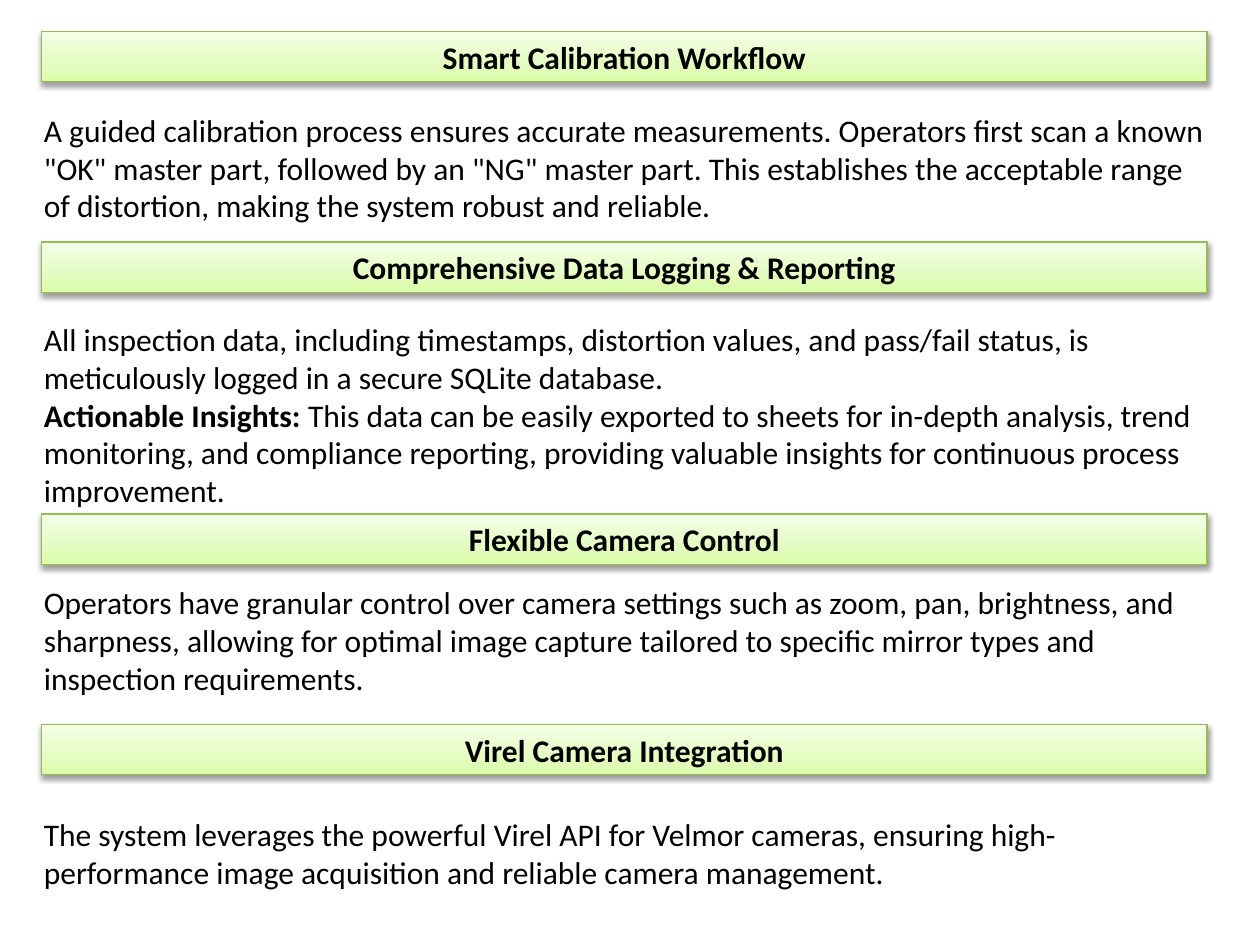
from lxml.etree import SubElement
from pptx import Presentation
from pptx.dml.color import RGBColor
from pptx.enum.shapes import MSO_SHAPE
from pptx.enum.text import MSO_ANCHOR, MSO_AUTO_SIZE, PP_ALIGN
from pptx.oxml.ns import qn
from pptx.util import Inches, Pt

# heading, heading top, body top, body width, body height, paragraphs of (text, bold) runs
SECTIONS = [
    ("Smart Calibration Workflow", 0.25, 0.83, 9.42, 1.01, [
        [("A guided calibration process ensures accurate measurements. Operators first "
          "scan a known \"OK\" master part, followed by an \"NG\" master part. This "
          "establishes the acceptable range of distortion, making the system robust "
          "and reliable.", False)]]),
    ("Comprehensive Data Logging & Reporting", 1.92, 2.49, 9.42, 1.62, [
        [("All inspection data, including timestamps, distortion values, and pass/fail "
          "status, is meticulously logged in a secure SQLite database.", False)],
        [("Actionable Insights: ", True),
         ("This data can be easily exported to sheets for in-depth analysis, trend "
          "monitoring, and compliance reporting, providing valuable insights for "
          "continuous process improvement.", False)]]),
    ("Flexible Camera Control", 4.08, 4.58, 9.33, 1.01, [
        [("Operators have granular control over camera settings such as zoom, pan, "
          "brightness, and sharpness, allowing for optimal image capture tailored to "
          "specific mirror types and inspection requirements.", False)]]),
    ("Virel Camera Integration", 5.75, 6.42, 9.33, 0.71, [
        [("The system leverages the powerful Virel API for Velmor cameras, ensuring "
          "high-performance image acquisition and reliable camera management.", False)]]),
]
BAR_LEFT, BAR_WIDTH, BAR_HEIGHT = 0.33, 9.25, 0.4
BODY_LEFT = 0.25
BAR_STOPS = [(0, "DAFDA7"), (35, "E4FCC2"), (100, "F5FFE7")]
BAR_LINE = "98B955"


def rgb(value):
    return RGBColor.from_string(value)


def write(shape, paragraphs, size=18, font="Calibri", color="000000",
          align=PP_ALIGN.LEFT, anchor=MSO_ANCHOR.TOP):
    tf = shape.text_frame
    tf.word_wrap = True
    tf.auto_size = MSO_AUTO_SIZE.SHAPE_TO_FIT_TEXT
    tf.vertical_anchor = anchor
    for i, runs in enumerate(paragraphs):
        p = tf.add_paragraph() if i else tf.paragraphs[0]
        p.alignment = align
        for text, bold in runs:
            r = p.add_run()
            r.text = text
            r.font.name, r.font.size, r.font.bold = font, Pt(size), bold
            r.font.color.rgb = rgb(color)


def add_color(parent, value):
    return SubElement(parent, qn("a:srgbClr"), val=value)


def style_bar(sp):
    """Give the bar its three-stop upward gradient, thin outline and soft shadow."""
    sp.fill.gradient()
    sp.fill.gradient_angle = 90
    stops = sp._element.spPr.find(qn("a:gradFill")).find(qn("a:gsLst"))
    for stop in list(stops):
        stops.remove(stop)
    for percent, value in BAR_STOPS:
        add_color(SubElement(stops, qn("a:gs"), pos=str(percent * 1000)), value)
    sp.line.color.rgb = rgb(BAR_LINE)
    sp.line.width = Pt(0.75)
    sp.shadow.inherit = False
    effects = sp._element.spPr.find(qn("a:effectLst"))
    shadow = SubElement(effects, qn("a:outerShdw"), blurRad=str(Pt(3.1)),
                        dist=str(Pt(1.6)), dir="5400000", rotWithShape="0")
    SubElement(add_color(shadow, "000000"), qn("a:alpha"), val="38000")


def main():
    prs = Presentation()
    prs.slide_width, prs.slide_height = Inches(10), Inches(7.5)
    s = prs.slides.add_slide(prs.slide_layouts[6])
    for heading, bar_top, body_top, width, height, paragraphs in SECTIONS:
        bar = s.shapes.add_shape(MSO_SHAPE.RECTANGLE, Inches(BAR_LEFT), Inches(bar_top),
                                 Inches(BAR_WIDTH), Inches(BAR_HEIGHT))
        style_bar(bar)
        write(bar, [[(heading, True)]], align=PP_ALIGN.CENTER, anchor=MSO_ANCHOR.MIDDLE)
        body = s.shapes.add_textbox(Inches(BODY_LEFT), Inches(body_top),
                                    Inches(width), Inches(height))
        write(body, paragraphs)
    prs.save("out.pptx")


if __name__ == "__main__":
    main()
